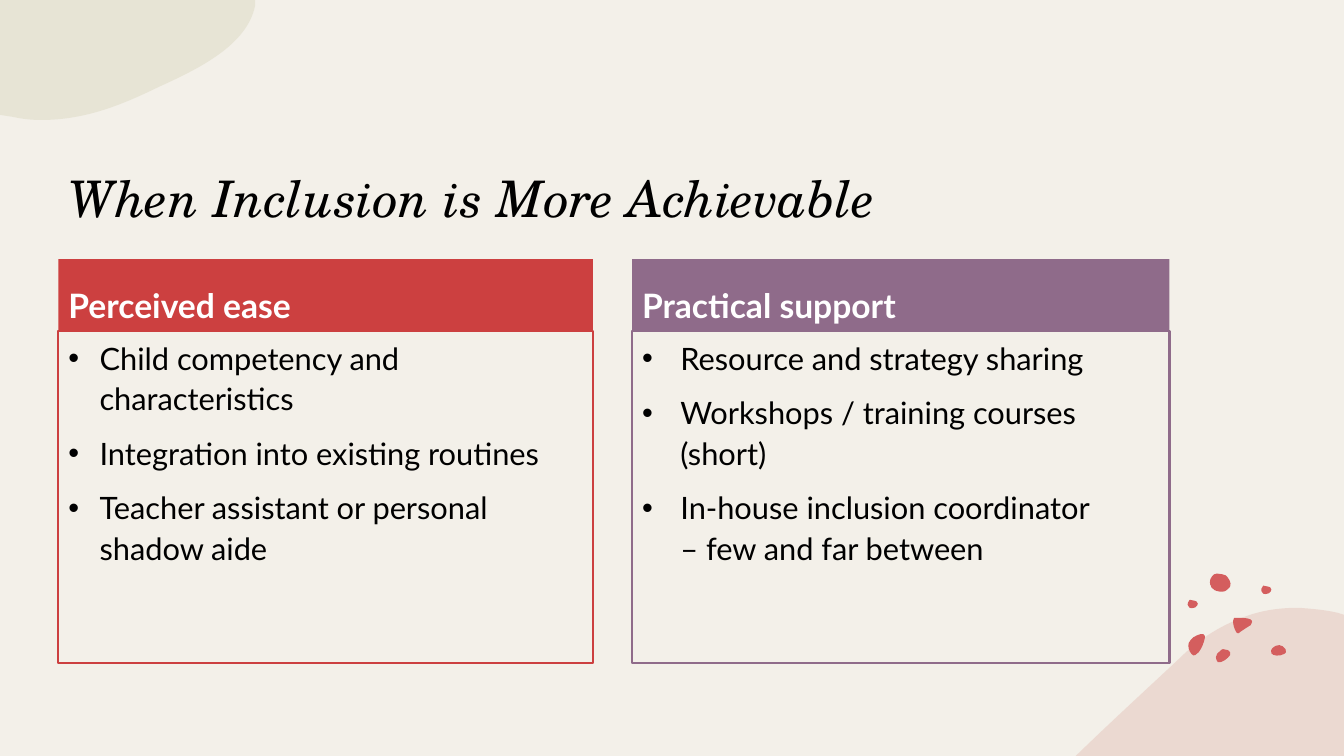
"""Build the slide on when inclusion is more achievable."""
from lxml.etree import SubElement
from pptx import Presentation
from pptx.dml.color import RGBColor
from pptx.enum.shapes import MSO_SHAPE
from pptx.enum.text import MSO_ANCHOR, MSO_AUTO_SIZE, PP_ALIGN
from pptx.oxml.ns import qn
from pptx.util import Inches, Pt

CREAM = RGBColor(0xF3, 0xF0, 0xE9)
BLUSH = RGBColor(0xE5, 0xC4, 0xBA)
SAGE = RGBColor(0xDC, 0xD9, 0xC3)
CORAL = RGBColor(0xD4, 0x5E, 0x5E)
RED = RGBColor(0xCC, 0x40, 0x40)
PURPLE = RGBColor(0x8F, 0x6B, 0x8A)
BLACK = RGBColor(0, 0, 0)
WHITE = RGBColor(0xFF, 0xFF, 0xFF)


def add_blob(shapes, color, start, *segments, alpha=None):
    """Draw a closed outline; two numbers make a line, six a Bezier curve."""
    fb = shapes.build_freeform(Inches(start[0]), Inches(start[1]))
    fb.add_line_segments([(Inches(seg[-2]), Inches(seg[-1])) for seg in segments], close=True)
    sp = fb.convert_to_shape()
    sp.shadow.inherit = False
    sp.fill.solid()
    sp.fill.fore_color.rgb = color
    sp.line.fill.background()
    for line, seg in zip(list(sp._element.iter(qn("a:lnTo"))), segments):
        if len(seg) == 6:
            line.tag = qn("a:cubicBezTo")
            line.remove(line[0])
            for x, y in zip(seg[::2], seg[1::2]):
                SubElement(line, qn("a:pt"), x=str(Inches(x) - sp.left), y=str(Inches(y) - sp.top))
    if alpha:
        clr = sp._element.spPr.find(qn("a:solidFill"))[0]
        SubElement(clr, qn("a:alpha")).set("val", str(alpha * 1000))


def add_panel(left, top, width, height):
    sp = s.shapes.add_shape(MSO_SHAPE.RECTANGLE, Inches(left), Inches(top),
                            Inches(width), Inches(height))
    sp.shadow.inherit = False
    sp.text_frame.word_wrap = True
    return sp


prs = Presentation()
prs.slide_width, prs.slide_height = Inches(13.33), Inches(7.5)
s = prs.slides.add_slide(prs.slide_layouts[5])
s.background.fill.solid()
s.background.fill.fore_color.rgb = CREAM

add_blob(s.shapes, BLUSH, (12.88, 6.03), (13.01, 6.04, 13.14, 6.05, 13.27, 6.08),
         (13.33, 6.1), (13.33, 7.5), (10.67, 7.5), (10.68, 7.49),
         (11.02, 7.16, 11.37, 6.84, 11.69, 6.54), (11.91, 6.32, 12.14, 6.19, 12.37, 6.11),
         (12.54, 6.05, 12.71, 6.03, 12.88, 6.03), alpha=50)

dots = s.shapes.add_group_shape().shapes
add_blob(dots, CORAL, (12.13, 6.44), (12.15, 6.44, 12.16, 6.44, 12.18, 6.45),
         (12.2, 6.46, 12.21, 6.48, 12.2, 6.5), (12.18, 6.53, 12.12, 6.58, 12.08, 6.57),
         (12.07, 6.56, 12.06, 6.54, 12.06, 6.52), (12.06, 6.5, 12.08, 6.47, 12.1, 6.46),
         (12.11, 6.45, 12.12, 6.44, 12.13, 6.44))
add_blob(dots, CORAL, (11.91, 6.29), (11.93, 6.29, 11.95, 6.29, 11.95, 6.31),
         (11.95, 6.32, 11.95, 6.32, 11.95, 6.33), (11.94, 6.38, 11.92, 6.43, 11.89, 6.47),
         (11.87, 6.49, 11.84, 6.52, 11.82, 6.49), (11.79, 6.46, 11.78, 6.41, 11.79, 6.38),
         (11.8, 6.35, 11.82, 6.34, 11.84, 6.32), (11.85, 6.32, 11.88, 6.29, 11.91, 6.29))
add_blob(dots, CORAL, (12.69, 6.4), (12.71, 6.4, 12.74, 6.42, 12.75, 6.44),
         (12.76, 6.46, 12.76, 6.48, 12.73, 6.49), (12.7, 6.51, 12.62, 6.51, 12.61, 6.48),
         (12.6, 6.46, 12.61, 6.44, 12.62, 6.43), (12.64, 6.41, 12.66, 6.4, 12.69, 6.4))
add_blob(dots, CORAL, (12.01, 5.81), (12, 5.81, 11.99, 5.75, 12.02, 5.72),
         (12.04, 5.7, 12.04, 5.69, 12.07, 5.69), (12.1, 5.69, 12.14, 5.7, 12.16, 5.71),
         (12.18, 5.73, 12.22, 5.78, 12.2, 5.82), (12.17, 5.85, 12.16, 5.87, 12.12, 5.87),
         (12.09, 5.87, 12.04, 5.86, 12.03, 5.84), (12.01, 5.83, 12.01, 5.82, 12.01, 5.81))
for x, y in [(12.51, 5.81), (11.78, 5.95)]:
    add_blob(dots, CORAL, (x, y + 0.05), (x, y + 0.05, x, y + 0.01, x + 0.02, y),
             (x + 0.04, y, x + 0.05, y, x + 0.07, y + 0.01),
             (x + 0.08, y + 0.01, x + 0.1, y + 0.02, x + 0.1, y + 0.04),
             (x + 0.1, y + 0.05, x + 0.09, y + 0.07, x + 0.08, y + 0.07),
             (x + 0.08, y + 0.07, x + 0.08, y + 0.08, x + 0.06, y + 0.08),
             (x + 0.05, y + 0.08, x + 0.03, y + 0.09, x + 0.02, y + 0.08),
             (x + 0.01, y + 0.06, x, y + 0.06, x, y + 0.05))
add_blob(dots, CORAL, (12.28, 6.13), (12.34, 6.13, 12.45, 6.13, 12.41, 6.19),
         (12.41, 6.2, 12.4, 6.21, 12.39, 6.21), (12.36, 6.23, 12.33, 6.25, 12.3, 6.27),
         (12.29, 6.28, 12.28, 6.29, 12.27, 6.28), (12.27, 6.28, 12.26, 6.27, 12.26, 6.27),
         (12.24, 6.23, 12.23, 6.2, 12.23, 6.16), (12.23, 6.15, 12.23, 6.14, 12.24, 6.13),
         (12.24, 6.13, 12.25, 6.13, 12.25, 6.13), (12.26, 6.13, 12.27, 6.13, 12.28, 6.13))

add_blob(s.shapes, SAGE, (0, 0), (2.53, 0), (2.53, 0.06),
         (2.45, 0.44, 2, 0.67, 1.58, 0.86), (1.23, 1.03, 0.86, 1.19, 0.41, 1.19),
         (0.31, 1.19, 0.22, 1.18, 0.13, 1.16), (0, 1.14), (0, 0), alpha=50)

title = s.shapes.title
title.left, title.top, title.width, title.height = map(Inches, (0.58, 0.86, 11.02, 1.45))
tf = title.text_frame
tf.text = "When Inclusion is More Achievable"
tf.word_wrap = True
tf.auto_size = MSO_AUTO_SIZE.NONE
tf.vertical_anchor = MSO_ANCHOR.BOTTOM
p = tf.paragraphs[0]
p.alignment = PP_ALIGN.LEFT
f = p.runs[0].font
f.name, f.size, f.italic = "TeX Gyre Schola", Pt(36), True
f.color.rgb = BLACK

columns = [
    (0.58, 5.3, RED, 0.31, "Perceived ease",
     ["Child competency and characteristics", "Integration into existing routines",
      "Teacher assistant or personal shadow aide"]),
    (6.27, 5.33, PURPLE, 0.38, "Practical support",
     ["Resource and strategy sharing", "Workshops / training courses (short)",
      "In-house inclusion coordinator \v– few and far between"]),
]
for left, width, color, indent, heading, items in columns:
    header = add_panel(left, 2.57, width, 0.71)
    header.fill.solid()
    header.fill.fore_color.rgb = color
    header.line.fill.background()
    tf = header.text_frame
    tf.vertical_anchor = MSO_ANCHOR.BOTTOM
    tf.text = heading
    p = tf.paragraphs[0]
    p.alignment = PP_ALIGN.LEFT
    p.line_spacing = 1.1
    f = p.runs[0].font
    f.name, f.size, f.bold = "Lato", Pt(24), True
    f.color.rgb = WHITE

    body = add_panel(left, 3.28, width, 3.3)
    body.fill.background()
    body.line.color.rgb = color
    body.line.width = Pt(1.5)
    tf = body.text_frame
    tf.vertical_anchor = MSO_ANCHOR.TOP
    for i, item in enumerate(items):
        p = tf.add_paragraph() if i else tf.paragraphs[0]
        p.text = item
        p.alignment = PP_ALIGN.LEFT
        p.line_spacing = 1.1
        p.space_before = Pt(10 if i else 0)
        pPr = p._p.get_or_add_pPr()
        pPr.set("marL", str(Inches(indent)))
        pPr.set("indent", str(-Inches(indent)))
        SubElement(pPr, qn("a:buFont")).set("typeface", "Arial")
        SubElement(pPr, qn("a:buChar")).set("char", "•")
        for r in p.runs:
            r.font.name, r.font.size = "Lato", Pt(22)
            r.font.color.rgb = BLACK

prs.save("out.pptx")
